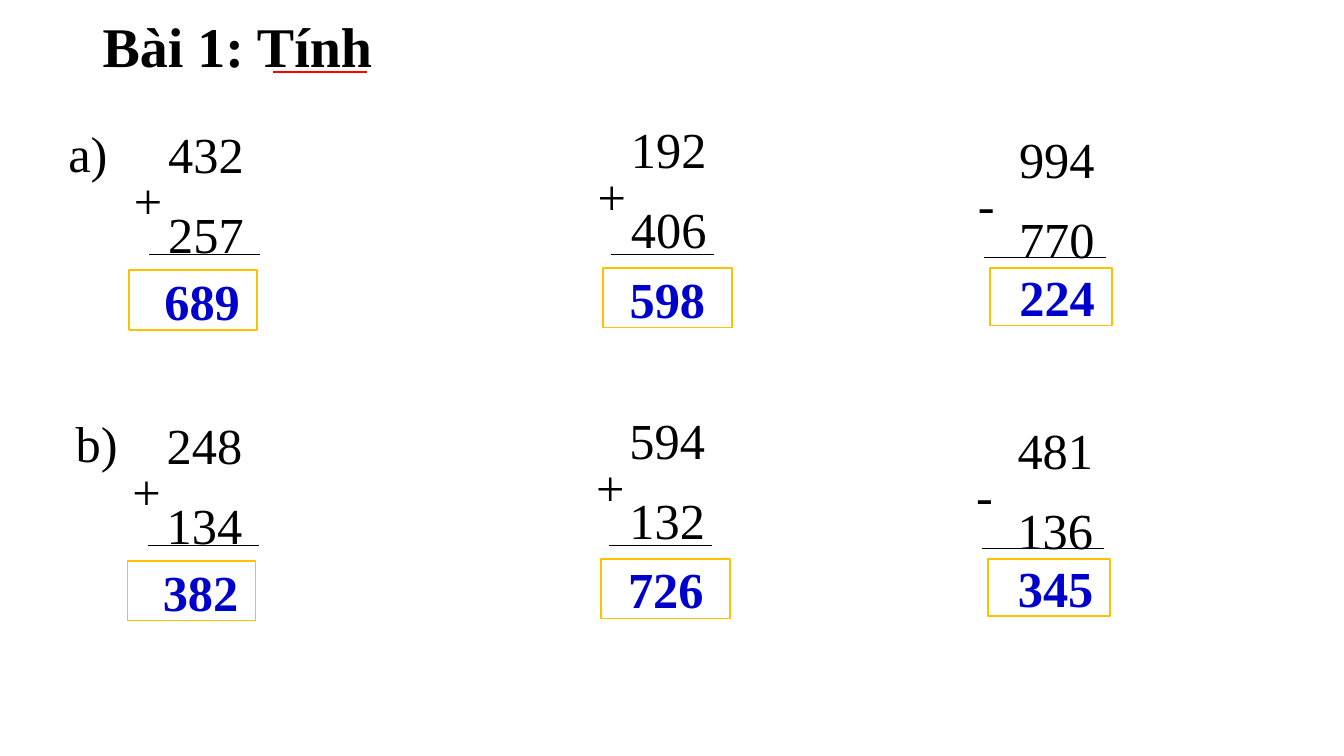
from dataclasses import dataclass
from lxml import etree
from pptx import Presentation
from pptx.dml.color import RGBColor as RGB
from pptx.enum.shapes import MSO_CONNECTOR as CONN, MSO_SHAPE as SHAPE
from pptx.enum.text import MSO_ANCHOR as ANCHOR, PP_ALIGN as ALIGN
from pptx.oxml.ns import qn
from pptx.util import Pt


@dataclass
class Theme:
    font: str = "Times New Roman"
    ink: RGB = RGB(0, 0, 0)
    answer: RGB = RGB(0, 0, 0xCC)
    frame: RGB = RGB(0xFF, 0xC0, 0)
    paper: RGB = RGB(0xFF, 0xFF, 0xFF)
    accent: RGB = RGB(0xFF, 0, 0)
    title_size: int = 40
    body_size: int = 36


theme = Theme()


def write(sp, text, size=theme.body_size, color=theme.ink, bold=False,
          align=ALIGN.JUSTIFY, spacing=1.15, after=7.2, anchor=ANCHOR.TOP,
          insets=(5, 3, 5, 3)):
    tf = sp.text_frame
    tf.text = text
    tf.word_wrap = True
    tf.vertical_anchor = anchor
    tf.margin_left, tf.margin_top, tf.margin_right, tf.margin_bottom = map(Pt, insets)
    for p in tf.paragraphs:
        p.alignment, p.line_spacing, p.space_after = align, spacing, Pt(after)
        for r in p.runs:
            r.font.name, r.font.size, r.font.bold = theme.font, Pt(size), bold
            r.font.color.rgb = color


def rule(x1, x2, y, color, width):
    ln = s.shapes.add_connector(CONN.STRAIGHT, Pt(x1), Pt(y), Pt(x2), Pt(y))
    ln.line.color.rgb = color
    ln.line.width = Pt(width)
    etree.SubElement(ln._element.spPr, qn("a:effectLst"))


prs = Presentation()
prs.slide_width, prs.slide_height = Pt(960), Pt(540)
s = prs.slides.add_slide(prs.slide_layouts[6])

title = s.shapes.add_textbox(Pt(66.2), Pt(16.6), Pt(759.6), Pt(36.7))
write(title, "Bài 1: Tính", theme.title_size, bold=True, align=ALIGN.LEFT,
      spacing=0.9, after=0, anchor=ANCHOR.MIDDLE, insets=(7.2, 3.6, 7.2, 3.6))
rule(195.1, 262.1, 51.6, theme.accent, 1.5)

columns = [
    dict(numbers=(115.2, 78.5, 98.6, 81), sign=(90.7, 111.6, 56.9, 26),
         bar=(106.6, 185.8, 181.4), result=(92.2, 193, 91.4, 42.5),
         indent=18, align=ALIGN.LEFT),
    dict(numbers=(445.7, 75, 92.9, 72), sign=(422, 108.7, 53.3, 21),
         bar=(436.3, 509.8, 181.4), result=(430.6, 191.5, 92.2, 42.5),
         indent=0, align=ALIGN.CENTER),
    dict(numbers=(722.9, 82.1, 85.7, 66), sign=(693.4, 114.5, 49, 19.4),
         bar=(702.7, 789.8, 183.6), result=(707, 191.5, 87.1, 41),
         indent=9, align=ALIGN.CENTER),
]
exercises = [
    ("a)", (43.9, 77.8), (0, 0),
     [("432", "+", "257", "689"), ("192", "+", "406", "598"), ("994", "-", "770", "224")]),
    ("b)", (49, 285.1), (-1.1, 207.8),
     [("248", "+", "134", "382"), ("594", "+", "132", "726"), ("481", "-", "136", "345")]),
]

for label, (label_x, label_y), (dx, dy), sums in exercises:
    for col, (first, sign, second, total) in zip(columns, sums):
        for key, text in (("numbers", f"{first}\n{second}"), ("sign", sign)):
            x, y, w, h = col[key]
            write(s.shapes.add_textbox(Pt(x + dx), Pt(y + dy), Pt(w), Pt(h)), text)

        x1, x2, y = col["bar"]
        rule(x1 + dx, x2 + dx, y + dy, theme.ink, 0.5)

        x, y, w, h = col["result"]
        sp = s.shapes.add_shape(SHAPE.RECTANGLE, Pt(x + dx), Pt(y + dy), Pt(w), Pt(h))
        sp.shadow.inherit = False
        sp.fill.solid()
        sp.fill.fore_color.rgb = theme.paper
        sp.line.color.rgb = theme.frame
        sp.line.width = Pt(1.25)
        write(sp, total, color=theme.answer, bold=True, align=col["align"],
              spacing=1, after=0, anchor=ANCHOR.MIDDLE,
              insets=(7.2 + col["indent"], 3.6, 7.2, 3.6))

    write(s.shapes.add_textbox(Pt(label_x), Pt(label_y), Pt(46.1), Pt(38.2)), label)

prs.save("out.pptx")
